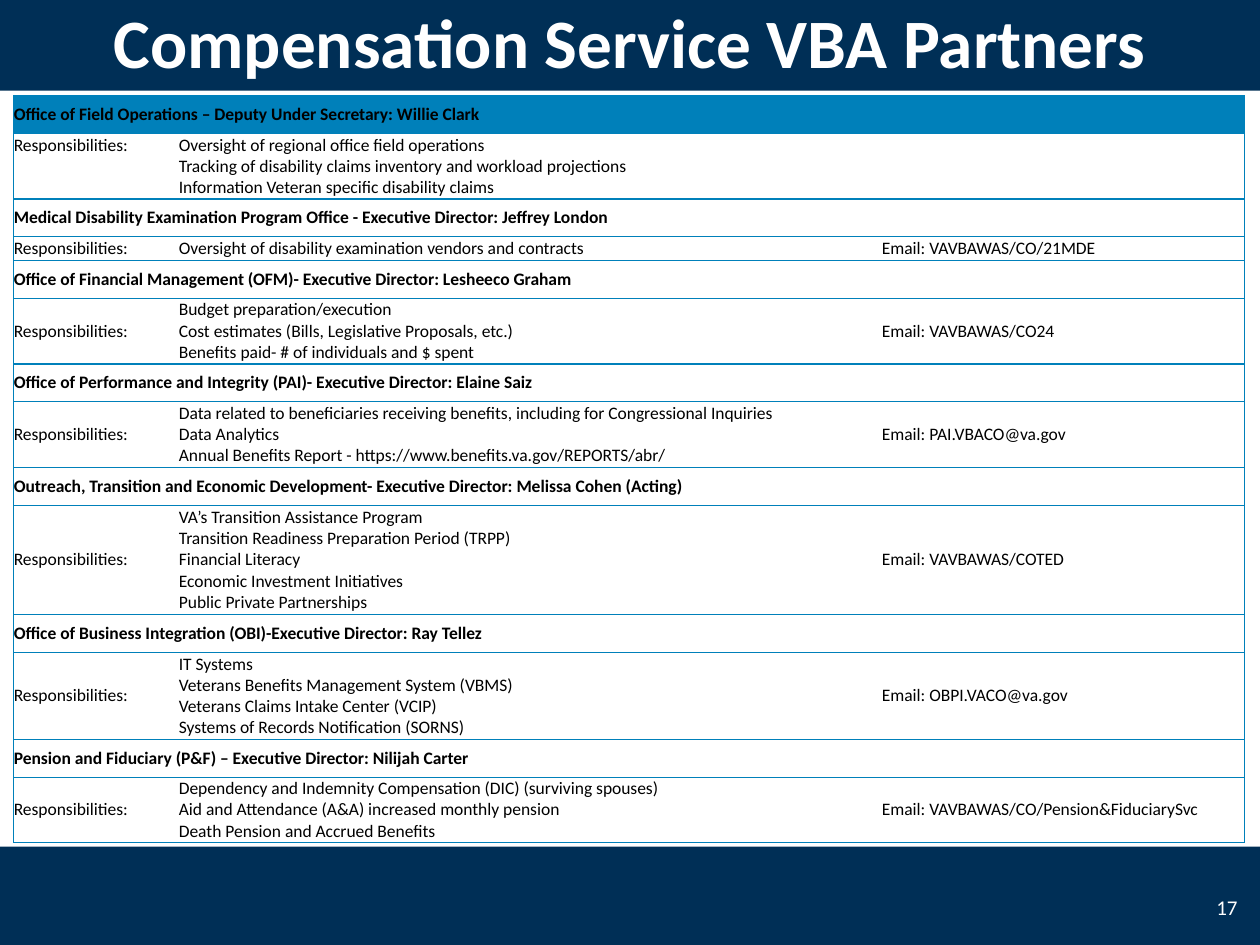
from lxml.etree import SubElement
from pptx import Presentation
from pptx.dml.color import RGBColor
from pptx.enum.shapes import MSO_SHAPE
from pptx.enum.text import MSO_ANCHOR, PP_ALIGN
from pptx.oxml.ns import qn
from pptx.util import Inches, Pt

NAVY = RGBColor(0x00, 0x2F, 0x56)
BLUE = RGBColor(0x00, 0x80, 0xBA)
WHITE = RGBColor(0xFF, 0xFF, 0xFF)
BLACK = RGBColor(0x00, 0x00, 0x00)

LABEL = "Responsibilities:"
COLUMNS = [1.31, 5.58, 2.88]
HEADING_HEIGHT = 0.3
DUTY_HEIGHTS = {1: 0.19, 3: 0.52, 4: 0.69, 5: 0.87}

OFFICES = [
    ("Office of Field Operations – Deputy Under Secretary: Willie Clark",
     ["Oversight of regional office field operations",
      "Tracking of disability claims inventory and workload projections",
      "Information Veteran specific disability claims"],
     ""),
    ("Medical Disability Examination Program Office - Executive Director: Jeffrey London",
     ["Oversight of disability examination vendors and contracts"],
     "Email: VAVBAWAS/CO/21MDE"),
    ("Office of Financial Management (OFM)- Executive Director: Lesheeco Graham",
     ["Budget preparation/execution",
      "Cost estimates (Bills, Legislative Proposals, etc.)",
      "Benefits paid- # of individuals and $ spent"],
     "Email: VAVBAWAS/CO24"),
    ("Office of Performance and Integrity (PAI)- Executive Director: Elaine Saiz",
     ["Data related to beneficiaries receiving benefits, including for Congressional Inquiries",
      "Data Analytics",
      "Annual Benefits Report - https://www.benefits.va.gov/REPORTS/abr/"],
     "Email: PAI.VBACO@va.gov"),
    ("Outreach, Transition and Economic Development- Executive Director: Melissa Cohen (Acting)",
     ["VA’s Transition Assistance Program",
      "Transition Readiness Preparation Period (TRPP)",
      "Financial Literacy",
      "Economic Investment Initiatives",
      "Public Private Partnerships"],
     "Email: VAVBAWAS/COTED"),
    ("Office of Business Integration (OBI)-Executive Director: Ray Tellez",
     ["IT Systems",
      "Veterans Benefits Management System (VBMS)",
      "Veterans Claims Intake Center (VCIP)",
      "Systems of Records Notification (SORNS)"],
     "Email: OBPI.VACO@va.gov"),
    ("Pension and Fiduciary (P&F) – Executive Director: Nilijah Carter",
     ["Dependency and Indemnity Compensation (DIC) (surviving spouses)",
      "Aid and Attendance (A&A) increased monthly pension",
      "Death Pension and Accrued Benefits"],
     "Email: VAVBAWAS/CO/Pension&FiduciarySvc"),
]
MERGED_DUTIES = 2


class SlideBuilder:
    def __init__(self, slide, font="Calibri"):
        self.slide = slide
        self.font = font

    def band(self, top):
        sp = self.slide.shapes.add_shape(
            MSO_SHAPE.RECTANGLE, 0, Inches(top), Inches(10), Inches(0.8))
        sp.shadow.inherit = False
        sp.fill.solid()
        sp.fill.fore_color.rgb = NAVY
        sp.line.fill.background()

    def run(self, p, text, size, color, bold=False):
        r = p.add_run()
        r.text = text
        r.font.name = self.font
        r.font.size = Pt(size)
        r.font.bold = bold
        r.font.color.rgb = color

    def text(self, box, text, size, align, bold=False):
        tf = self.slide.shapes.add_textbox(*map(Inches, box)).text_frame
        tf.word_wrap = True
        tf.vertical_anchor = MSO_ANCHOR.MIDDLE
        p = tf.paragraphs[0]
        p.alignment = align
        self.run(p, text, size, WHITE, bold)

    def border(self, cell, side, visible):
        ln = SubElement(cell._tc.get_or_add_tcPr(), qn(f"a:ln{side}"), w=str(Pt(0.75)))
        if visible:
            fill = SubElement(ln, qn("a:solidFill"))
            SubElement(fill, qn("a:srgbClr"), val=str(BLUE))
        else:
            SubElement(ln, qn("a:noFill"))

    def style_cell(self, cell, column, filled, size):
        cell.margin_left = cell.margin_right = 0
        cell.margin_top = cell.margin_bottom = 0
        cell.vertical_anchor = MSO_ANCHOR.MIDDLE
        edges = {"L": column == 0, "R": column == len(COLUMNS) - 1, "T": True, "B": True}
        for side, visible in edges.items():
            self.border(cell, side, visible)
        if filled:
            cell.fill.solid()
            cell.fill.fore_color.rgb = BLUE
        else:
            cell.fill.background()
        end = cell.text_frame.paragraphs[0]._p.get_or_add_endParaRPr()
        end.set("sz", str(size * 100))

    def fill_cell(self, cell, lines, bold=False):
        tf = cell.text_frame
        for i, line in enumerate(lines):
            p = tf.paragraphs[0] if i == 0 else tf.add_paragraph()
            self.run(p, line, 10, BLACK, bold)

    def indent_duties(self, cell):
        stop = str(Inches(COLUMNS[0]))
        first, *rest = cell.text_frame.paragraphs
        tabs = SubElement(first._p.get_or_add_pPr(), qn("a:tabLst"))
        SubElement(tabs, qn("a:tab"), pos=stop, algn="l")
        for p in rest:
            p._p.get_or_add_pPr().set("marL", stop)

    def partner_table(self, left, top, offices):
        heights = [h for _, duties, _ in offices
                   for h in (HEADING_HEIGHT, DUTY_HEIGHTS[len(duties)])]
        table = self.slide.shapes.add_table(
            len(heights), len(COLUMNS), Inches(left), Inches(top),
            Inches(sum(COLUMNS)), Inches(sum(heights))).table
        table.first_row = table.horz_banding = False
        for column, width in zip(table.columns, COLUMNS):
            column.width = Inches(width)
        for i, (row, height) in enumerate(zip(table.rows, heights)):
            row.height = Inches(height)
            for j, cell in enumerate(row.cells):
                self.style_cell(cell, j, filled=i == 0, size=10)
        for i, (heading, duties, email) in enumerate(offices):
            title = table.cell(2 * i, 0)
            title.merge(table.cell(2 * i, 1))
            self.fill_cell(title, [heading], bold=True)
            label, detail, contact = (table.cell(2 * i + 1, j) for j in range(3))
            if i < MERGED_DUTIES:
                label.merge(detail)
                self.fill_cell(label, [f"{LABEL}\t{duties[0]}", *duties[1:]])
                self.indent_duties(label)
            else:
                self.fill_cell(label, [LABEL])
                self.fill_cell(detail, duties)
            if email:
                self.fill_cell(contact, [email])


def main():
    prs = Presentation()
    prs.slide_width, prs.slide_height = Inches(10), Inches(7.5)
    s = SlideBuilder(prs.slides.add_slide(prs.slide_layouts[6]))
    for top in (6.72, -0.08):
        s.band(top)
    s.text((9.5, 7, 0.42, 0.4), "17", 12, PP_ALIGN.RIGHT)
    s.text((0, -0.08, 10, 0.8), "Compensation Service VBA Partners", 39.6,
           PP_ALIGN.CENTER, bold=True)
    s.partner_table(0.11, 0.76, OFFICES)
    prs.save("out.pptx")


if __name__ == "__main__":
    main()
